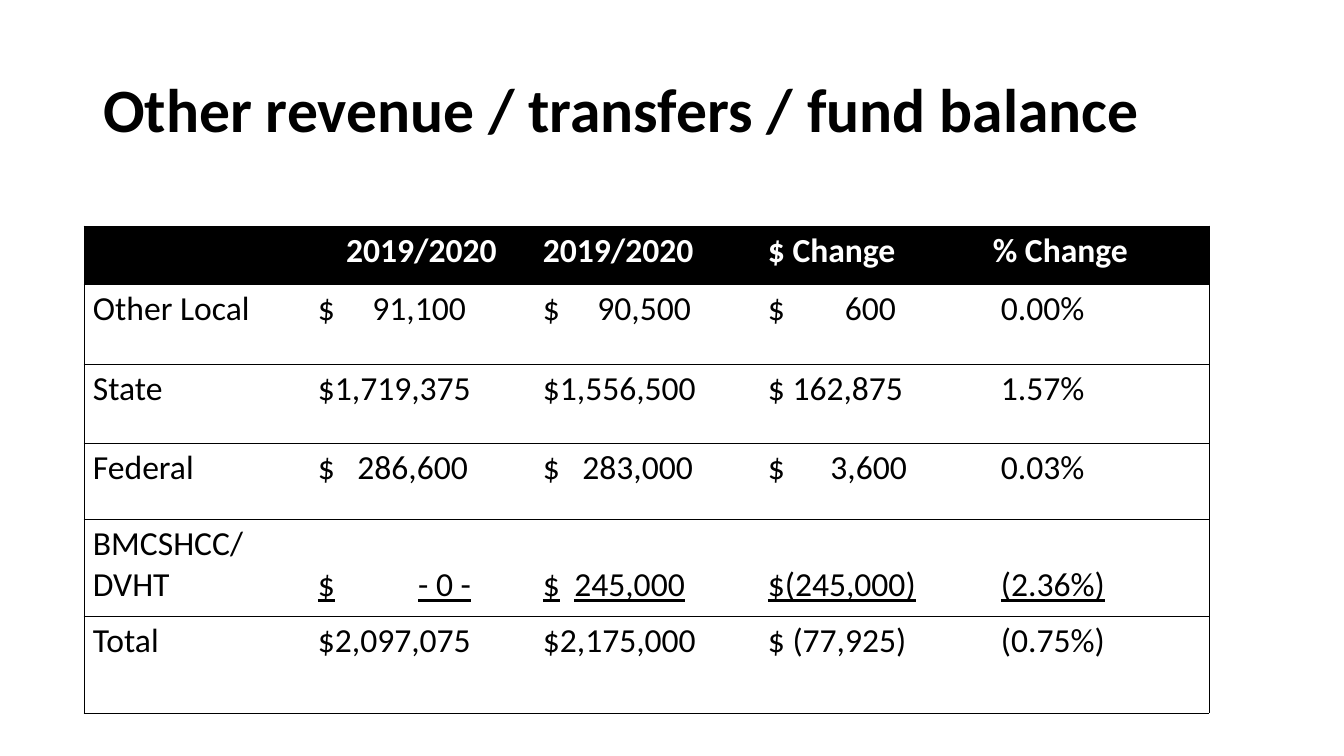
from lxml.etree import SubElement
from pptx import Presentation
from pptx.dml.color import RGBColor
from pptx.enum.text import MSO_ANCHOR, MSO_AUTO_SIZE, PP_ALIGN
from pptx.oxml import parse_xml
from pptx.oxml.ns import nsdecls, qn
from pptx.util import Pt

BLACK = RGBColor(0, 0, 0)
WHITE = RGBColor(255, 255, 255)
SCALE = 914400 / 100.8


def px(n):
    return round(n * SCALE)


def style(par, color, **form):
    for run in par.runs:
        run.font.color.rgb = color
        for key, val in {"name": "Calibri", **form}.items():
            setattr(run.font, key, val)


# Slide
deck = Presentation()
deck.slide_width, deck.slide_height = px(1344), px(756)
slide = deck.slides.add_slide(deck.slide_layouts[5])

# Title
title = slide.shapes.title
place = {"left": 93, "top": 40, "width": 1159, "height": 146}
for key, val in place.items():
    setattr(title, key, px(val))
frame = title.text_frame
frame.text = "Other revenue / transfers / fund balance"
frame.auto_size = MSO_AUTO_SIZE.NONE
frame.vertical_anchor = MSO_ANCHOR.MIDDLE
head = frame.paragraphs[0]
head.alignment = PP_ALIGN.LEFT
head.line_spacing = 0.9
style(head, BLACK, size=Pt(44), bold=True)

# Table rows: height, cell texts, right tab stops of the money columns
rows = [
    (58, ["", "2019/2020", "2019/2020", "$ Change", "% Change"], []),
    (80, ["Other Local", "$\t91,100", "$\t90,500", "$\t600", "0.00%"],
     [148, 148, 128]),
    (79, ["State", "$1,719,375", "$1,556,500", "$ 162,875", "1.57%"], []),
    (76, ["Federal", "$\t286,600", "$\t283,000", "$\t3,600", "0.03%"],
     [150, 150, 139]),
    (97, ["BMCSHCC/\nDVHT", "$\t- 0 -\t", "$\t245,000", "$(245,000)",
          "(2.36%)"], [153, 142]),
    (97, ["Total", "$2,097,075", "$2,175,000", "$ (77,925)", "(0.75%)"], []),
]
COLS, WIDE, SUM = 5, 225, 4
high = sum(row[0] for row in rows)
grid = slide.shapes.add_table(
    len(rows), COLS, px(84), px(226), px(COLS * WIDE), px(high)).table
grid.horz_banding = False
for col in grid.columns:
    col.width = px(WIDE)

for r, (tall, texts, stops) in enumerate(rows):
    grid.rows[r].height = px(tall)
    for c, text in enumerate(texts):
        cell = grid.cell(r, c)
        cell.text = text

        # Insets: percent values stand a little further in
        inset = 17 if r and c == COLS - 1 else 9
        sides = {"left": inset, "right": 9, "top": 5, "bottom": 5}
        for side, val in sides.items():
            setattr(cell, "margin_" + side, px(val))

        # Fill
        if r == 0:
            cell.fill.solid()
            cell.fill.fore_color.rgb = BLACK
        else:
            cell.fill.background()

        # Text
        under = r == SUM and c > 0
        if under:
            cell.vertical_anchor = MSO_ANCHOR.BOTTOM
            cell.margin_bottom = px(10)
        for par in cell.text_frame.paragraphs:
            par.alignment = PP_ALIGN.CENTER if (r, c) == (0, 1) else PP_ALIGN.LEFT
            style(par, BLACK if r else WHITE, size=Pt(24), bold=r == 0,
                  underline=under)
            if "\t" in text:
                tabs = SubElement(par._p.get_or_add_pPr(), qn("a:tabLst"))
                ends = [stops[c - 1]]
                if text.endswith("\t"):
                    ends.append(ends[0] + 16)
                for end in ends:
                    SubElement(tabs, qn("a:tab"), pos=str(px(end)), algn="r")

        # Borders: row lines and outer frame only
        edges = {"lnL": c == 0, "lnR": c == COLS - 1, "lnT": True, "lnB": True}
        props = cell._tc.get_or_add_tcPr()
        for i, (edge, shown) in enumerate(edges.items()):
            paint = (f'<a:solidFill><a:srgbClr val="{BLACK}"/></a:solidFill>'
                     if shown else "<a:noFill/>")
            props.insert(i, parse_xml(
                f'<a:{edge} {nsdecls("a")} w="{Pt(0.5)}">{paint}</a:{edge}>'))

deck.save("out.pptx")
